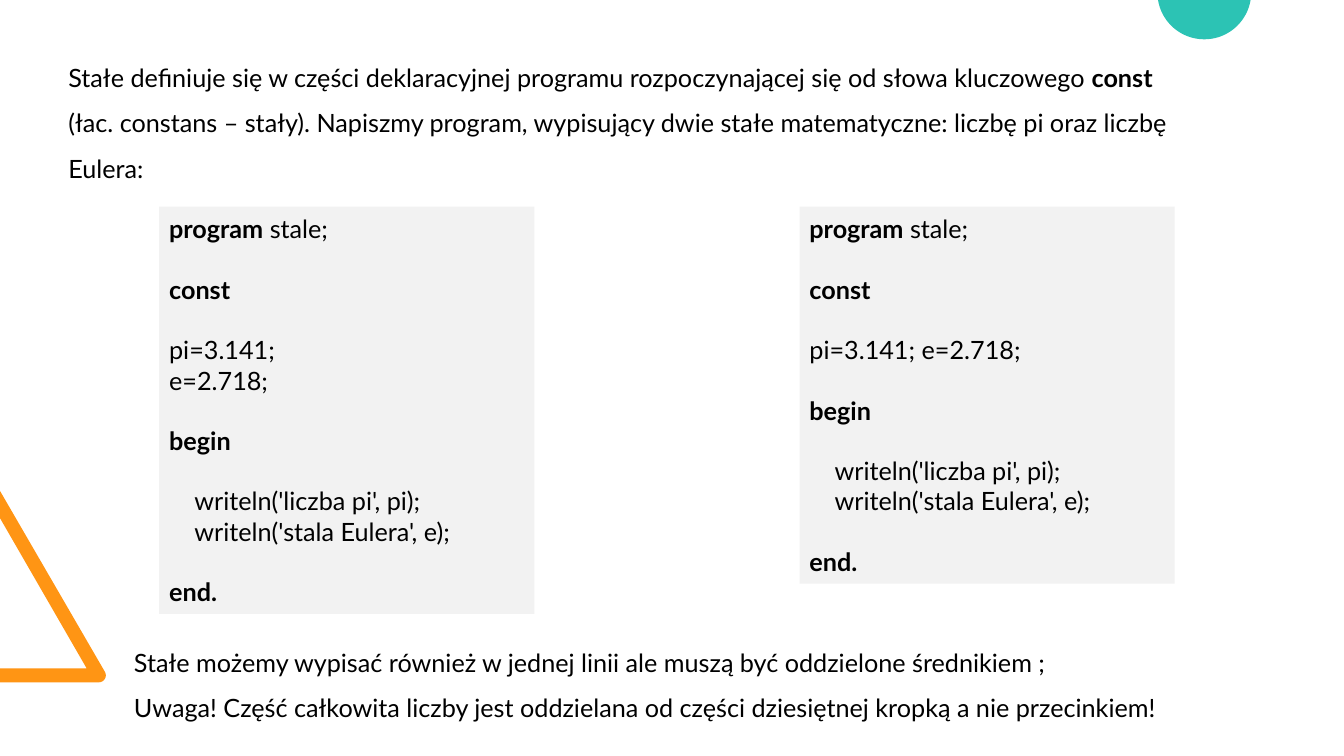
"""Build a slide on declaring constants in a program, with two code listings."""
import math

import pptx
import pptx.dml.color
import pptx.enum.shapes
import pptx.enum.text
import pptx.util

WIDTH, HEIGHT = 13.33, 7.5
COL, ROW = WIDTH / 100, HEIGHT / 100
FONT, SIZE, LINE = "Lato", 18, 21.6
INDENT = 0.25

INTRO = [["Stałe definiuje się w części deklaracyjnej programu rozpoczynającej się "
          "od słowa kluczowego *const *(łac. constans – stały). Napiszmy program, "
          "wypisujący dwie stałe matematyczne: liczbę pi oraz liczbę Eulera:"]]
NOTES = [["Stałe możemy wypisać również w jednej linii ale muszą być oddzielone średnikiem ;",
          "Uwaga! Część całkowita liczby jest oddzielana od części dziesiętnej "
          "kropką a nie przecinkiem!"]]


def listing(constants):
    return [["*program* stale;"], ["*const*"], constants, ["*begin*"],
            ["writeln('liczba pi', pi);", "writeln('stala Eulera', e);"], ["*end.*"]]


def color(value):
    return pptx.dml.color.RGBColor.from_string(value)


def grid(left, top, width, height):
    return [pptx.util.Inches(n * unit)
            for n, unit in zip((left, top, width, height), (COL, ROW, COL, ROW))]


def paint(sp, fill):
    sp.shadow.inherit = False
    sp.fill.solid()
    sp.fill.fore_color.rgb = color(fill)
    sp.line.fill.background()


def arc(x, y, rx, ry, start, end, steps):
    angles = [math.radians(start + (end - start) * i / steps) for i in range(steps + 1)]
    return [(x + rx * math.cos(a), y + ry * math.sin(a)) for a in angles]


def add_outline(s, points, fill):
    scaled = [(pptx.util.Inches(x * COL), pptx.util.Inches(y * ROW)) for x, y in points]
    builder = s.shapes.build_freeform(*scaled[0])
    builder.add_line_segments(scaled[1:], close=True)
    paint(builder.convert_to_shape(), fill)


def write(tf, blocks, spacing=1.0):
    tf.word_wrap = True
    lines = [(line, i > 0 and j == 0)
             for i, block in enumerate(blocks) for j, line in enumerate(block)]
    for n, (line, gap) in enumerate(lines):
        p = tf.add_paragraph() if n else tf.paragraphs[0]
        p.alignment = pptx.enum.text.PP_ALIGN.LEFT
        p.line_spacing = spacing
        p.space_before = pptx.util.Pt(LINE if gap else 0)
        if line.startswith("writeln"):
            p._p.get_or_add_pPr().set("marL", str(pptx.util.Inches(INDENT)))
        for k, part in enumerate(line.split("*")):
            if part:
                r = p.add_run()
                r.text = part
                r.font.name = FONT
                r.font.size = pptx.util.Pt(SIZE)
                r.font.bold = k % 2 == 1
                r.font.color.rgb = color("000000")


def add_text(s, box, blocks):
    write(s.shapes.add_textbox(*grid(*box)).text_frame, blocks, 1.5)


def add_code(s, box, blocks):
    sp = s.shapes.add_shape(pptx.enum.shapes.MSO_SHAPE.RECTANGLE, *grid(*box))
    paint(sp, "F2F2F2")
    write(sp.text_frame, blocks)


def main():
    prs = pptx.Presentation()
    prs.slide_width = pptx.util.Inches(WIDTH)
    prs.slide_height = pptx.util.Inches(HEIGHT)
    s = prs.slides.add_slide(prs.slide_layouts[6])

    corner = arc(7.35, 89.33, 0.53, 0.93, -30, 90, 8)
    add_outline(s, [(0, 90.27), (0, 88.4), (6.45, 88.4), (0, 68.53), (0, 64.93)] + corner,
                "FF9514")
    add_outline(s, arc(89.61, -1, 3.49, 6.2, 9.28, 170.72, 48), "2CC3B4")

    add_text(s, (4.35, 5.6, 84.4, 18.8), INTRO)
    add_code(s, (11.85, 27.33, 27.91, 53.87), listing(["pi=3.141;", "e=2.718;"]))
    add_text(s, (9.23, 82.93, 83.8, 12.8), NOTES)
    add_code(s, (59.49, 27.33, 27.91, 49.87), listing(["pi=3.141; e=2.718;"]))
    prs.save("out.pptx")


if __name__ == "__main__":
    main()
